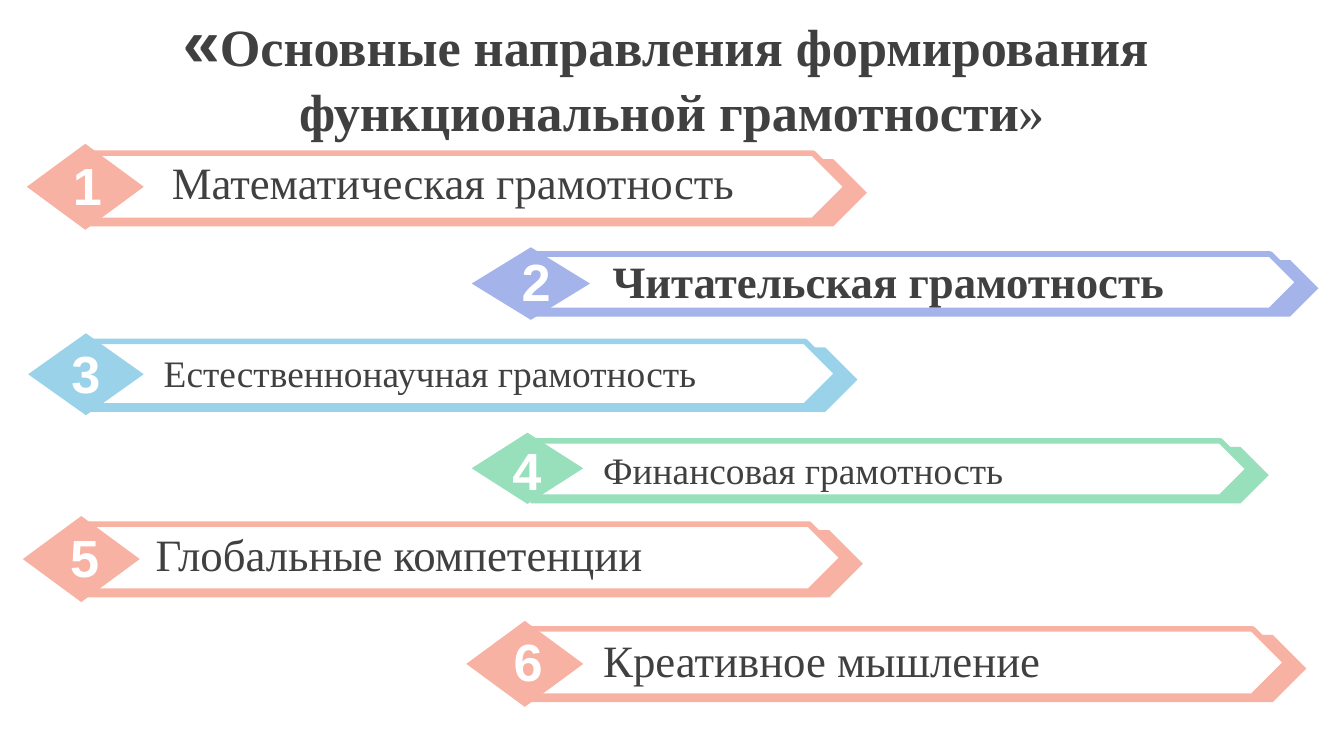
from pptx import Presentation
from pptx.dml.color import RGBColor
from pptx.enum.shapes import MSO_SHAPE
from pptx.enum.text import MSO_ANCHOR, MSO_AUTO_SIZE, PP_ALIGN
from pptx.util import Inches, Pt

DARK, WHITE = "404040", "FFFFFF"
CORAL, VIOLET, BLUE, GREEN = "F8B2A3", "A4B4EA", "9AD3E9", "98DFBB"
SERIF, SANS = "Times New Roman", "Arial"


def add_run(para, text, size, font, color, bold):
    span = para.add_run()
    span.text = text
    span.font.size = Pt(size)
    span.font.name = font
    span.font.bold = bold
    span.font.color.rgb = RGBColor.from_string(color)


def add_solid(group, kind, left, top, width, height, fill, outline=None):
    """Add a filled preset shape, outlined only when a line colour is given."""
    shape = group.shapes.add_shape(
        kind, Inches(left), Inches(top), Inches(width), Inches(height))
    shape.shadow.inherit = False
    shape.fill.solid()
    shape.fill.fore_color.rgb = RGBColor.from_string(fill)
    if outline:
        shape.line.color.rgb = RGBColor.from_string(outline)
        shape.line.width = Pt(3)
    else:
        shape.line.fill.background()


deck = Presentation()
deck.slide_width = Inches(10)
deck.slide_height = deck.slide_width * 9 // 16
page = deck.slides.add_slide(deck.slide_layouts[5])

# Title
title = page.shapes.title
title.left, title.top = 0, Inches(0.29)
title.width, title.height = deck.slide_width, Inches(0.47)
frame = title.text_frame
frame.word_wrap = True
frame.auto_size = MSO_AUTO_SIZE.NONE
frame.vertical_anchor = MSO_ANCHOR.MIDDLE
title_lines = [
    [("«", 36, SANS, True), ("Основные направления формирования ", 28, SERIF, True)],
    [("функциональной грамотности", 28, SERIF, True), ("»", 28, SERIF, False)],
]
for index, line in enumerate(title_lines):
    para = frame.paragraphs[0] if index == 0 else frame.add_paragraph()
    para.alignment = PP_ALIGN.CENTER
    for text, size, font, bold in line:
        add_run(para, text, size, font, DARK, bold)

# Banners: text, colour, label size, bold, then the diamond's box, the plate's box,
# and the left and top of the number and of the label
banners = [
    ("Математическая грамотность", CORAL, 24, False,
     (0.2, 1.07, 0.87, 0.64), (0.66, 1.14, 5.64, 0.5), (0.43, 1.09), (1.18, 1.1)),
    ("Читательская грамотность", VIOLET, 24, True,
     (3.51, 1.84, 0.88, 0.54), (3.97, 1.89, 5.69, 0.42), (3.77, 1.8), (4.46, 1.84)),
    ("Естественнонаучная грамотность", BLUE, 20, False,
     (0.21, 2.48, 0.86, 0.61), (0.66, 2.54, 5.57, 0.48), (0.42, 2.49), (1.12, 2.56)),
    ("Финансовая грамотность", GREEN, 20, False,
     (3.51, 3.22, 0.83, 0.53), (3.95, 3.28, 5.34, 0.42), (3.7, 3.21), (4.39, 3.28)),
    ("Глобальные компетенции", CORAL, 24, False,
     (0.17, 3.84, 0.87, 0.64), (0.63, 3.9, 5.64, 0.5), (0.41, 3.86), (1.06, 3.87)),
    ("Креативное мышление", CORAL, 24, False,
     (3.47, 4.62, 0.87, 0.64), (3.93, 4.68, 5.64, 0.5), (3.71, 4.63), (4.39, 4.66)),
]

for number, banner in enumerate(banners, start=1):
    text, color, size, bold, diamond, plate, number_corner, label_corner = banner
    left, top, width, height = plate
    group = page.shapes.add_group_shape()

    add_solid(group, MSO_SHAPE.PENTAGON, left, top + 0.045, width + 0.15, height, color)
    add_solid(group, MSO_SHAPE.PENTAGON, *plate, WHITE, color)
    add_solid(group, MSO_SHAPE.DIAMOND, *diamond, color)

    texts = [
        (f"{number} ", number_corner, (0.44, 0.57),
         MSO_ANCHOR.MIDDLE, PP_ALIGN.CENTER, 28, SANS, WHITE, True),
        (text, label_corner, (5.2, size / 48),
         MSO_ANCHOR.TOP, PP_ALIGN.LEFT, size, SERIF, DARK, bold),
    ]
    for words, corner, extent, anchor, align, *style in texts:
        box = group.shapes.add_textbox(*map(Inches, corner + extent))
        box.text_frame.word_wrap = True
        box.text_frame.auto_size = MSO_AUTO_SIZE.SHAPE_TO_FIT_TEXT
        box.text_frame.vertical_anchor = anchor
        para = box.text_frame.paragraphs[0]
        para.alignment = align
        add_run(para, words, *style)

deck.save("out.pptx")
